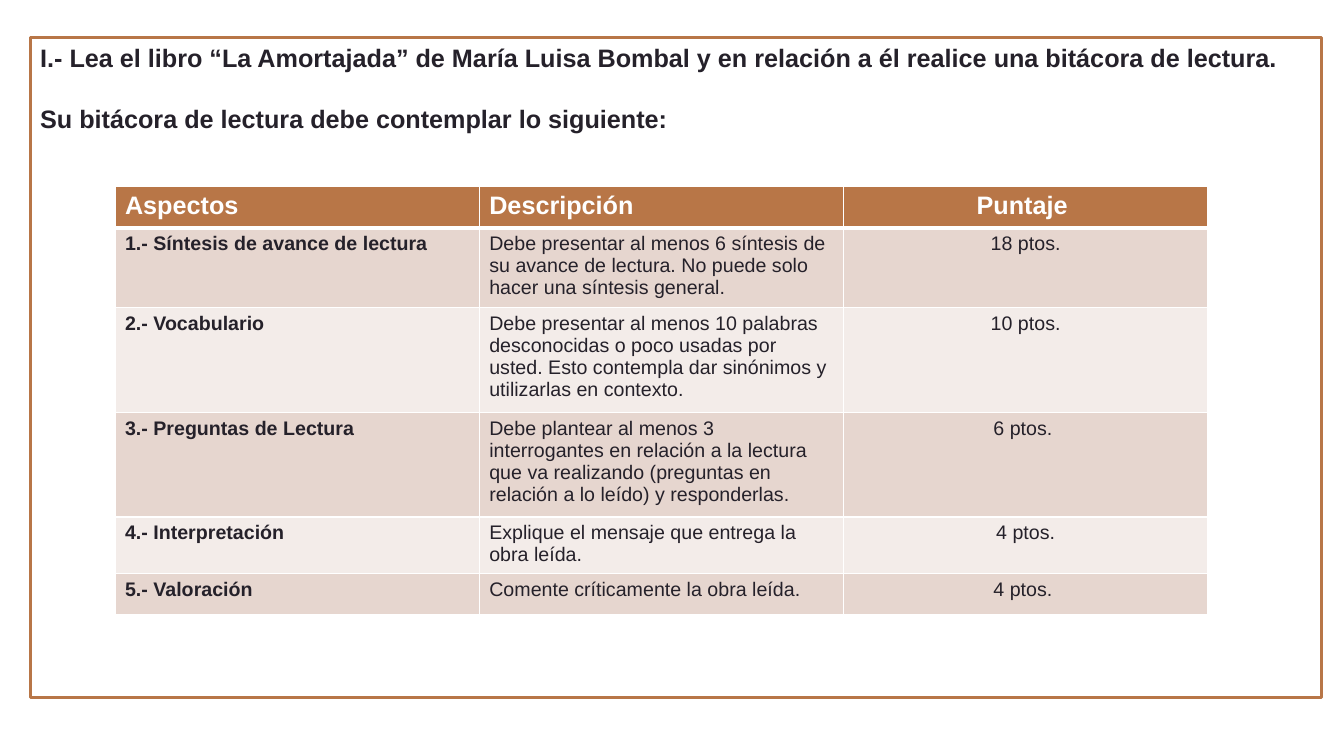
import pptx
import pptx.util
import pptx.dml.color
import pptx.enum.shapes
import pptx.enum.text
import pptx.oxml
import pptx.oxml.ns

Inches, Pt = pptx.util.Inches, pptx.util.Pt
ALIGN = pptx.enum.text.PP_ALIGN
COLORS = {"copper": "B87647", "ink": "25212A", "white": "FFFFFF",
          "rose": "E6D6CF", "pale": "F3ECE9"}
INTRO = [
    "I.- Lea el libro “La Amortajada” de María Luisa Bombal y en relación a él "
    "realice una bitácora de lectura. ",
    "Su bitácora de lectura debe contemplar lo siguiente:",
]
HEADS = ["Aspectos", "Descripción", "Puntaje "]
# Height in inches, then the three cells
ASPECTS = [
    (0.79, "1.- Síntesis de avance de lectura",
     "Debe presentar al menos 6 síntesis de su avance de lectura. "
     "No puede solo hacer una síntesis general.", "18 ptos."),
    (1.04, "2.- Vocabulario",
     "Debe presentar al menos 10 palabras desconocidas o poco usadas por usted. "
     "Esto contempla dar sinónimos y utilizarlas en contexto.", "10 ptos."),
    (1.04, "3.- Preguntas de Lectura",
     "Debe plantear al menos 3 interrogantes en relación a la lectura que va "
     "realizando (preguntas en relación a lo leído) y responderlas.", "6 ptos. "),
    (0.56, "4.- Interpretación",
     "Explique el mensaje que entrega la obra leída.", "4 ptos."),
    (0.41, "5.- Valoración", "Comente críticamente la obra leída.", "4 ptos. "),
]


def rgb(name):
    return pptx.dml.color.RGBColor.from_string(COLORS[name])


def paint(fill, color):
    fill.solid()
    fill.fore_color.rgb = rgb(color)


def write(para, text, size, color, bold, align):
    para.alignment = align
    run = para.add_run()
    run.text = text
    font = run.font
    font.name, font.size, font.bold = "Arial", Pt(size), bold
    font.color.rgb = rgb(color)


def edge(cell, bottom):
    """Draw white cell borders; bottom is the lower width in points."""
    props = cell._tc.get_or_add_tcPr()
    widths = {"lnL": 1, "lnR": 1, "lnT": 1, "lnB": bottom}
    for spot, (side, width) in enumerate(widths.items()):
        props.insert(spot, pptx.oxml.parse_xml(
            f'<a:{side} {pptx.oxml.ns.nsdecls("a")} w="{Pt(width)}"><a:solidFill>'
            f'<a:srgbClr val="{COLORS["white"]}"/></a:solidFill></a:{side}>'))


def add_frame(slide, left, top, width, height):
    frame = slide.shapes.add_shape(
        pptx.enum.shapes.MSO_SHAPE.RECTANGLE,
        Inches(left), Inches(top), Inches(width), Inches(height))
    frame.shadow.inherit = False
    paint(frame.fill, "white")
    frame.line.color.rgb = rgb("copper")
    frame.line.width = Pt(2)
    body = frame.text_frame
    body.word_wrap = True
    body.vertical_anchor = pptx.enum.text.MSO_ANCHOR.TOP
    for index, text in enumerate(INTRO):
        para = body.add_paragraph() if index else body.paragraphs[0]
        if index:
            para.space_before = Pt(22)
        write(para, text, 18, "ink", True, ALIGN.JUSTIFY)


def add_rubric(slide, left, top, width, head):
    """Place the score table; head is the height of its first row."""
    rows = [(head, *HEADS), *ASPECTS]
    total = sum(row[0] for row in rows)
    table = slide.shapes.add_table(
        len(rows), len(HEADS),
        Inches(left), Inches(top), Inches(width), Inches(total)).table
    for col in table.columns:
        col.width = Inches(width / len(HEADS))
    for r, (height, *texts) in enumerate(rows):
        table.rows[r].height = Inches(height)
        first = r == 0
        fill = "copper" if first else "rose" if r % 2 else "pale"
        size, color = (18, "white") if first else (14, "ink")
        for c, text in enumerate(texts):
            cell = table.cell(r, c)
            paint(cell.fill, fill)
            edge(cell, 3 if first else 1)
            write(cell.text_frame.paragraphs[0], text, size, color,
                  first or c == 0, ALIGN.CENTER if c == 2 else ALIGN.LEFT)


def main():
    deck = pptx.Presentation()
    deck.slide_width, deck.slide_height = Inches(13.33), Inches(7.5)
    slide = deck.slides.add_slide(deck.slide_layouts[6])
    add_frame(slide, 0.3, 0.37, 12.81, 6.55)
    add_rubric(slide, 1.14, 1.85, 10.84, 0.41)
    deck.save("out.pptx")


if __name__ == "__main__":
    main()
